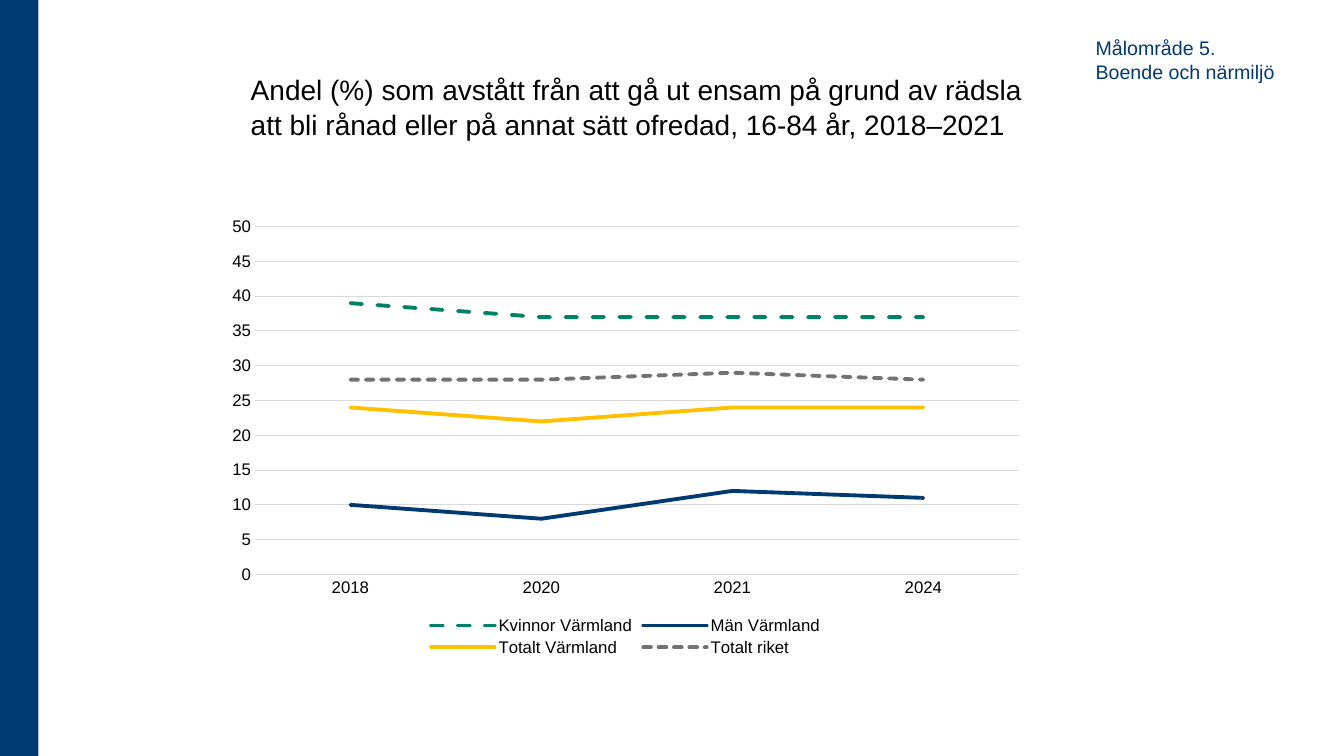
import pptx
import pptx.chart.data
import pptx.dml.color
import pptx.enum.chart
import pptx.enum.dml
import pptx.enum.shapes
import pptx.enum.text
import pptx.util
from pptx.util import Cm, Pt

FONT = "Arial"
NAVY, BLACK, GRID = "003A70", "000000", "D9D9D9"
DASH = pptx.enum.dml.MSO_LINE

TITLE = ["Andel (%) som avstått från att gå ut ensam på grund av rädsla "
         "att bli rånad eller på annat sätt ofredad, 16-84 år, 2018–2021"]
TARGET_AREA = ["Målområde 5.", "Boende och närmiljö"]
YEARS = ["2018", "2020", "2021", "2024"]
SERIES = [  # name, percentages, colour, dash
    ("Kvinnor Värmland", (39, 37, 37, 37), "008264", DASH.DASH),
    ("Män Värmland", (10, 8, 12, 11), NAVY, DASH.SOLID),
    ("Totalt Värmland", (24, 22, 24, 24), "FFC000", DASH.SOLID),
    ("Totalt riket", (28, 28, 29, 28), "767171", DASH.SQUARE_DOT),
]


def paint(color_format, color):
    color_format.rgb = pptx.dml.color.RGBColor.from_string(color)


def style_font(font, size, color):
    font.name, font.size = FONT, Pt(size)
    paint(font.color, color)


def style_line(line, color, width):
    line.width = Pt(width)
    paint(line.color, color)


def add_text(page, area, lines, size, color, anchor, spacing):
    box = page.shapes.add_textbox(*map(Cm, area))
    frame = box.text_frame
    frame.word_wrap = True
    frame.vertical_anchor = anchor
    for number, line in enumerate(lines):
        para = frame.add_paragraph() if number else frame.paragraphs[0]
        para.line_spacing = spacing
        span = para.add_run()
        span.text = line
        style_font(span.font, size, color)


def add_band(page, height):
    band = page.shapes.add_shape(
        pptx.enum.shapes.MSO_SHAPE.RECTANGLE, 0, 0, Cm(0.97), height)
    band.shadow.inherit = False
    band.fill.solid()
    paint(band.fill.fore_color, NAVY)
    band.line.fill.background()


def add_trend_chart(page, area):
    data = pptx.chart.data.CategoryChartData(number_format="0")
    data.categories = YEARS
    for name, values, _, _ in SERIES:
        data.add_series(name, values)
    chart = page.shapes.add_chart(
        pptx.enum.chart.XL_CHART_TYPE.LINE, *map(Cm, area), data).chart
    style_font(chart.font, 10, BLACK)
    chart.has_title = False
    chart.plots[0].vary_by_categories = False

    chart.has_legend = True
    chart.legend.position = pptx.enum.chart.XL_LEGEND_POSITION.BOTTOM
    chart.legend.include_in_layout = False
    style_font(chart.legend.font, 12, BLACK)

    for axis in (chart.category_axis, chart.value_axis):
        axis.major_tick_mark = pptx.enum.chart.XL_TICK_MARK.NONE
        axis.minor_tick_mark = pptx.enum.chart.XL_TICK_MARK.NONE
        style_font(axis.tick_labels.font, 12, BLACK)
    style_line(chart.category_axis.format.line, GRID, 0.75)
    percent = chart.value_axis
    percent.minimum_scale, percent.maximum_scale, percent.major_unit = 0, 50, 5
    percent.format.line.fill.background()
    style_line(percent.major_gridlines.format.line, GRID, 0.75)

    for series, (_, _, color, dash) in zip(chart.plots[0].series, SERIES):
        series.smooth = False
        series.marker.style = pptx.enum.chart.XL_MARKER_STYLE.NONE
        style_line(series.format.line, color, 2.75)
        series.format.line.dash_style = dash
        series.format.line._ln.set("cap", "rnd")


def main():
    deck = pptx.Presentation()
    deck.slide_width, deck.slide_height = Cm(33.87), Cm(19.05)
    page = deck.slides.add_slide(deck.slide_layouts[6])
    anchor = pptx.enum.text.MSO_ANCHOR
    add_band(page, deck.slide_height)
    add_text(page, (6.07, 2.01, 20.02, 1.68), TITLE, 20, BLACK, anchor.BOTTOM, 1.05)
    add_trend_chart(page, (5.44, 5.26, 20.65, 11.38))
    add_text(page, (27.36, 0.79, 5.61, 1.45), TARGET_AREA, 14, NAVY, anchor.TOP, 1.0)
    deck.save("out.pptx")


if __name__ == "__main__":
    main()
